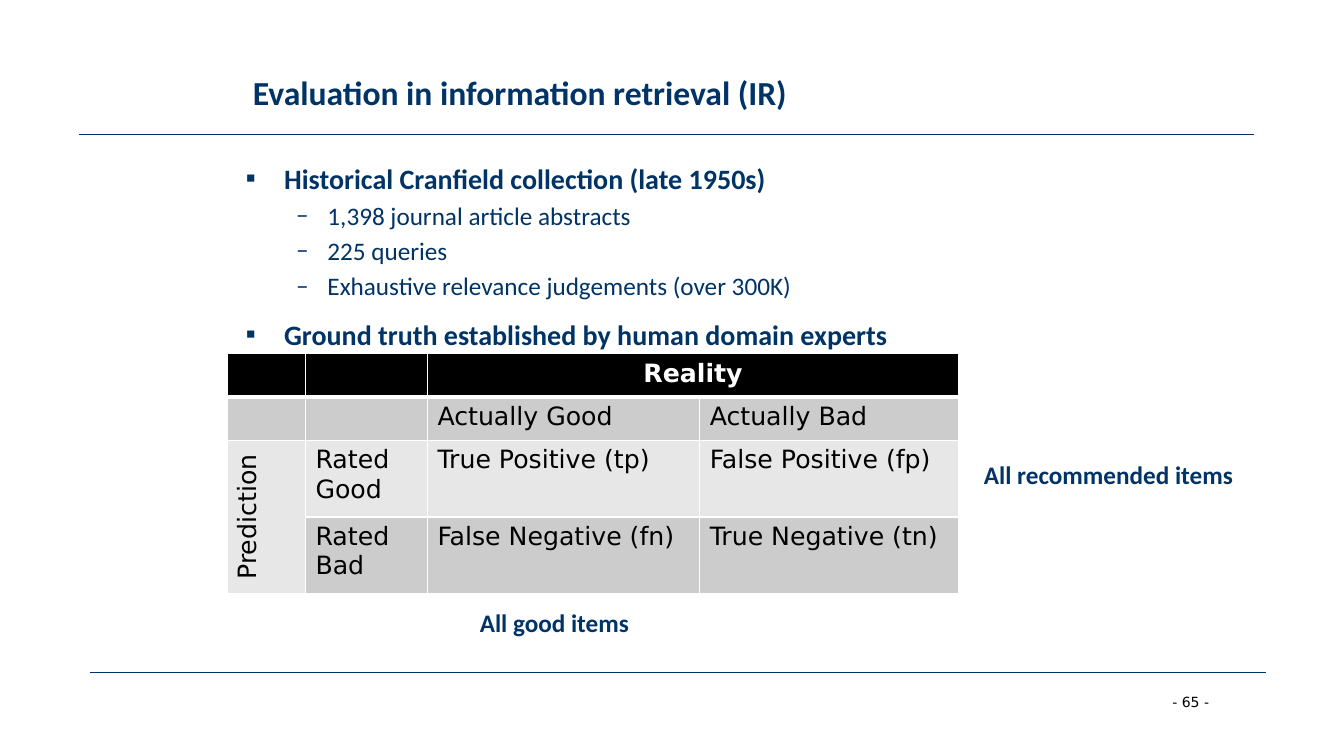
from lxml.etree import SubElement
from pptx import Presentation
from pptx.dml.color import RGBColor
from pptx.enum.shapes import MSO_CONNECTOR
from pptx.enum.text import MSO_ANCHOR, MSO_AUTO_SIZE, PP_ALIGN
from pptx.oxml.ns import qn
from pptx.util import Inches, Pt

NAVY = RGBColor(0x00, 0x33, 0x66)
BLACK = RGBColor(0x00, 0x00, 0x00)
WHITE = RGBColor(0xFF, 0xFF, 0xFF)
DARK_BAND = RGBColor(0xCC, 0xCC, 0xCC)
LIGHT_BAND = RGBColor(0xE7, 0xE7, 0xE7)
TEXT_FONT = "Calibri"
TABLE_FONT = "DejaVu Sans"

BULLETS = [
    (0, "Historical Cranfield collection (late 1950s)"),
    (1, "1,398 journal article abstracts"),
    (1, "225 queries"),
    (1, "Exhaustive relevance judgements (over 300K)"),
    (0, "Ground truth established by human domain experts"),
]
# Per level: bullet, left margin, hanging indent, size, bold, space before
LEVELS = [
    ("▪", 0.38, 0.38, 20, True, 12),
    ("–", 0.81, 0.31, 18, False, 3.6),
]

MATRIX = [
    ["", "", "Reality", ""],
    ["", "", "Actually Good", "Actually Bad"],
    ["Prediction", "Rated Good", "True Positive (tp)", "False Positive (fp)"],
    ["", "Rated Bad", "False Negative (fn)", "True Negative (tn)"],
]
COLUMN_WIDTHS = [0.77, 1.21, 2.7, 2.57]
ROW_HEIGHTS = [0.43, 0.43, 0.76, 0.76]
ROW_FILLS = [BLACK, DARK_BAND, LIGHT_BAND, DARK_BAND]


def style_paragraph(paragraph, size, color=NAVY, bold=False, font_name=TEXT_FONT):
    for run in paragraph.runs:
        run.font.name = font_name
        run.font.size = Pt(size)
        run.font.bold = bold
        run.font.color.rgb = color


def add_text(slide, box, text, size, wrap=False, **style):
    shape = slide.shapes.add_textbox(*map(Inches, box))
    text_frame = shape.text_frame
    text_frame.word_wrap = wrap
    if not wrap:
        text_frame.auto_size = MSO_AUTO_SIZE.SHAPE_TO_FIT_TEXT
    text_frame.text = text
    style_paragraph(text_frame.paragraphs[0], size, **style)
    return text_frame


def add_rule(slide, left, top, width):
    line = slide.shapes.add_connector(
        MSO_CONNECTOR.STRAIGHT,
        Inches(left), Inches(top), Inches(left + width), Inches(top))
    line.line.color.rgb = NAVY
    line.line.width = Pt(0.75)
    SubElement(line._element.spPr, qn("a:effectLst"))


def add_title(slide, box):
    text_frame = add_text(slide, box, "Evaluation in information retrieval (IR)",
                          24, wrap=True, bold=True)
    text_frame.vertical_anchor = MSO_ANCHOR.MIDDLE


def add_bullets(slide, box):
    text_frame = slide.shapes.add_textbox(*map(Inches, box)).text_frame
    text_frame.word_wrap = True
    text_frame.text = "\n".join(text for _, text in BULLETS)
    for paragraph, (level, _) in zip(text_frame.paragraphs, BULLETS):
        bullet, margin, hanging, size, bold, before = LEVELS[level]
        paragraph.level = level
        paragraph.space_before = Pt(before)
        style_paragraph(paragraph, size, bold=bold)
        properties = paragraph._p.get_or_add_pPr()
        properties.set("marL", str(Inches(margin)))
        properties.set("indent", str(-Inches(hanging)))
        SubElement(properties, qn("a:buFont"), typeface=TEXT_FONT)
        SubElement(properties, qn("a:buChar"), char=bullet)


def set_borders(cell, bottom_width, top_width):
    properties = cell._tc.get_or_add_tcPr()
    widths = {"a:lnL": 1, "a:lnR": 1, "a:lnT": top_width, "a:lnB": bottom_width}
    for tag, width in widths.items():
        border = SubElement(properties, qn(tag), w=str(Pt(width)))
        fill = SubElement(border, qn("a:solidFill"))
        SubElement(fill, qn("a:srgbClr"), val=str(WHITE))


def add_matrix(slide, left, top):
    table = slide.shapes.add_table(
        len(ROW_HEIGHTS), len(COLUMN_WIDTHS), Inches(left), Inches(top),
        Inches(sum(COLUMN_WIDTHS)), Inches(sum(ROW_HEIGHTS))).table
    for column, width in zip(table.columns, COLUMN_WIDTHS):
        column.width = Inches(width)
    for row, height in zip(table.rows, ROW_HEIGHTS):
        row.height = Inches(height)

    # Cell text, fills and borders, with a thick line under the header
    for row_index, texts in enumerate(MATRIX):
        is_header = row_index == 0
        for column_index, text in enumerate(texts):
            cell = table.cell(row_index, column_index)
            set_borders(cell, bottom_width=3 if is_header else 1,
                        top_width=3 if row_index == 1 else 1)
            cell.fill.solid()
            cell.fill.fore_color.rgb = ROW_FILLS[row_index]
            cell.text = text
            style_paragraph(cell.text_frame.paragraphs[0], 18,
                            WHITE if is_header else BLACK, is_header, TABLE_FONT)

    # Merged headings
    reality, prediction = table.cell(0, 2), table.cell(2, 0)
    reality.merge(table.cell(0, 3))
    prediction.merge(table.cell(3, 0))
    for cell in (reality, prediction):
        cell.text_frame.paragraphs[0].alignment = PP_ALIGN.CENTER
    prediction._tc.get_or_add_tcPr().set("vert", "vert270")


def add_frame(slide):
    add_rule(slide, 0.78, 1.33, 11.66)
    add_rule(slide, 0.89, 6.67, 11.67)
    add_text(slide, (11.53, 6.83, 0.67, 0.27), "- 65 -", 10,
             color=BLACK, font_name=TABLE_FONT)


def build_slide(presentation):
    slide = presentation.slides.add_slide(presentation.slide_layouts[6])
    add_frame(slide)
    add_title(slide, (2.41, 0.29, 6.46, 1.25))
    add_bullets(slide, (2.34, 1.55, 8.03, 4.96))
    add_matrix(slide, 2.26, 3.51)
    # Captions beside the table
    add_text(slide, (4.66, 5.98, 1.69, 0.4), "All good items", 18, bold=True)
    add_text(slide, (9.66, 4.51, 2.69, 0.4), "All recommended items", 18, bold=True)


def main():
    presentation = Presentation()
    presentation.slide_width = Inches(13.33)
    presentation.slide_height = Inches(7.5)
    build_slide(presentation)
    presentation.save("out.pptx")


if __name__ == "__main__":
    main()
